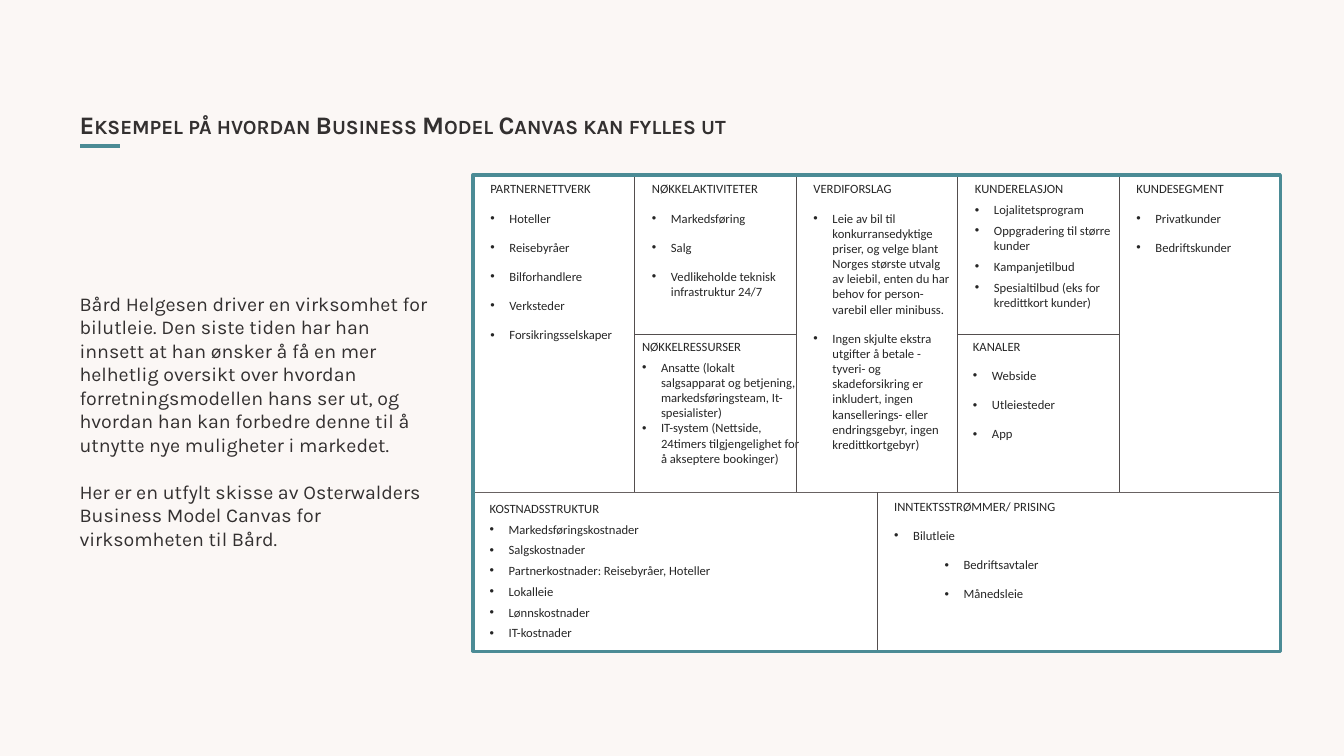
from lxml import etree
from pptx import Presentation
from pptx import util as u
from pptx.dml.color import RGBColor
from pptx.enum import shapes, text
from pptx.oxml import ns

HUES = {"back": "FBF7F5", "white": "FFFFFF", "teal": "4B8B95", "grid": "534E4E",
        "mid": "686262", "ink": "262626", "dark": "333030"}
LEFT, TOP, COL, ROW = 11.92, 4.41, 4.07, 4


def rule(x1, y1, x2, y2, tone, width):
    """Draw a straight line, in cm, without a shadow."""
    line = slide.shapes.add_connector(shapes.MSO_CONNECTOR.STRAIGHT,
                                      u.Cm(x1), u.Cm(y1), u.Cm(x2), u.Cm(y2))
    line.line.color.rgb = RGBColor.from_string(HUES[tone])
    line.line.width = u.Pt(width)
    etree.SubElement(line._element.spPr, ns.qn("a:effectLst"))
    return line


def block(x, y, width, height, fill=True, tone=None, weight=0):
    """Add a rectangle, in cm, white or hollow, with a border if a tone is given."""
    rect = slide.shapes.add_shape(shapes.MSO_SHAPE.RECTANGLE, u.Cm(x), u.Cm(y),
                                  u.Cm(width), u.Cm(height))
    rect.shadow.inherit = False
    if fill:
        rect.fill.solid()
        rect.fill.fore_color.rgb = RGBColor.from_string(HUES["white"])
    else:
        rect.fill.background()
    if tone:
        rect.line.color.rgb = RGBColor.from_string(HUES[tone])
        rect.line.width = u.Pt(weight)
    else:
        rect.line.fill.background()
    return rect


deck = Presentation()
deck.slide_width, deck.slide_height = u.Cm(33.87), u.Cm(19.05)
slide = deck.slides.add_slide(deck.slide_layouts[1])
slide.background.fill.solid()
slide.background.fill.fore_color.rgb = RGBColor.from_string(HUES["back"])

# Title and story
title, body = slide.placeholders
story = [
    "Bård Helgesen driver en virksomhet for bilutleie. Den siste tiden har han innsett "
    "at han ønsker å få en mer helhetlig oversikt over hvordan forretningsmodellen hans "
    "ser ut, og hvordan han kan forbedre denne til å utnytte nye muligheter i markedet.",
    "Her er en utfylt skisse av Osterwalders Business Model Canvas for virksomheten til Bård.",
]
heads = [
    (title, 2.63, 32.11, 1.02, 18, ["Eksempel på hvordan Business Model Canvas kan fylles ut"]),
    (body, 7.22, 9.55, 6.25, 14, story),
]
for holder, top, width, height, size, paras in heads:
    holder.left, holder.top = u.Cm(1.75), u.Cm(top)
    holder.width, holder.height = u.Cm(width), u.Cm(height)
    frame = holder.text_frame
    frame.auto_size = text.MSO_AUTO_SIZE.SHAPE_TO_FIT_TEXT
    frame.vertical_anchor = text.MSO_ANCHOR.TOP
    for n, words in enumerate(paras):
        para = frame.paragraphs[0] if n == 0 else frame.add_paragraph()
        para.alignment = text.PP_ALIGN.LEFT
        para.space_before = u.Pt(16.8 if n else 0)
        props = para._p.get_or_add_pPr()
        props.set("marL", "0")
        props.set("indent", "0")
        etree.SubElement(props, ns.qn("a:buNone"))
        run = para.add_run()
        run.text = words
        run.font.name, run.font.size = "Karla", u.Pt(size)
        run.font.color.rgb = RGBColor.from_string(HUES["dark"])
        if holder is title:
            run.font.bold = True
            run._r.get_or_add_rPr().set("cap", "small")
rule(2.02, 3.67, 3.02, 3.67, "teal", 3)

# White canvas
canvas = block(LEFT, TOP, 5 * COL, 3 * ROW, tone="grid", weight=0.5)

# Column, row, inset x and y, width, height, space before and after, heading, items, subitems
parts = [
    (0, 0, 0.41, 0.03, 3.53, 4.34, 6, 4, "PARTNERNETTVERK",
     ["Hoteller", "Reisebyråer", "Bilforhandlere", "Verksteder", "Forsikringsselskaper"], []),
    (1, 0, 0.41, 0.03, 3.99, 3.25, 6, 4, "NØKKELAKTIVITETER",
     ["Markedsføring", "Salg", "Vedlikeholde teknisk infrastruktur 24/7"], []),
    (2, 0, 0.41, 0.03, 3.58, 7.11, 6, 4, "VERDIFORSLAG",
     ["Leie av bil til konkurransedyktige priser, og velge blant Norges største utvalg av "
      "leiebil, enten du har behov for person- varebil eller minibuss.",
      "Ingen skjulte ekstra utgifter å betale - tyveri- og skadeforsikring er inkludert, "
      "ingen kansellerings- eller endringsgebyr, ingen kredittkortgebyr)"], []),
    (3, 0, 0.41, 0.03, 3.56, 3.53, 0, 4, "KUNDERELASJON",
     ["Lojalitetsprogram", "Oppgradering til større kunder", "Kampanjetilbud",
      "Spesialtilbud (eks for kredittkort kunder)"], []),
    (4, 0, 0.41, 0.03, 3.56, 2.13, 6, 4, "KUNDESEGMENT",
     ["Privatkunder", "Bedriftskunder"], []),
    (1, 1, 0.16, 0, 4.05, 3.86, 0, 0, "NØKKELRESSURSER",
     ["Ansatte (lokalt salgsapparat og betjening, markedsføringsteam, It-spesialister)",
      "IT-system (Nettside, 24timers tilgjengelighet for å akseptere bookinger)"], []),
    (3, 1, 0.36, 0, 3.56, 2.87, 6, 4, "KANALER", ["Webside", "Utleiesteder", "App"], []),
    (0, 2, 0.39, 0.08, 9.8, 3.81, 0, 4, "KOSTNADSSTRUKTUR",
     ["Markedsføringskostnader", "Salgskostnader", "Partnerkostnader: Reisebyråer, Hoteller",
      "Lokalleie", "Lønnskostnader", "IT-kostnader"], []),
    (2.5, 2, 0.41, 0.03, 7.42, 2.87, 6, 4, "INNTEKTSSTRØMMER/ PRISING",
     ["Bilutleie"], ["Bedriftsavtaler", "Månedsleie"]),
]
for col, row, dx, dy, width, height, before, after, head, items, subs in parts:
    box = block(LEFT + col * COL + dx, TOP + row * ROW + dy, width, height)
    frame = box.text_frame
    frame.word_wrap = True
    frame.auto_size = text.MSO_AUTO_SIZE.SHAPE_TO_FIT_TEXT
    frame.vertical_anchor = text.MSO_ANCHOR.TOP
    frame.margin_left = frame.margin_right = u.Cm(0.03)
    frame.margin_top = frame.margin_bottom = u.Cm(0.13)
    for n, words in enumerate([head] + items + subs):
        para = frame.paragraphs[0] if n == 0 else frame.add_paragraph()
        para.alignment = text.PP_ALIGN.LEFT
        para.space_before = u.Pt(before if n else 0)
        para.space_after = u.Pt(after if n else 4)
        if n:
            para.level = 1 if n > len(items) else 0
            props = para._p.get_or_add_pPr()
            props.set("marL", str(u.Cm(0.48 + 1.27 * para.level)))
            props.set("indent", str(u.Cm(-0.48)))
            etree.SubElement(props, ns.qn("a:buFont")).set("typeface", "Arial")
            etree.SubElement(props, ns.qn("a:buChar")).set("char", "•")
        run = para.add_run()
        run.text = words
        run.font.name, run.font.size = "Calibri", u.Pt(9)
        run.font.color.rgb = RGBColor.from_string(HUES["ink"])

# Grid lines, in columns and rows
grid = [(n, 0, n, 2) for n in range(1, 5)]
grid += [(1, 1, 2, 1), (3, 1, 4, 1), (0, 2, 5, 2), (2.5, 2, 2.5, 3)]
for x1, y1, x2, y2 in grid:
    line = rule(LEFT + x1 * COL, TOP + y1 * ROW, LEFT + x2 * COL, TOP + y2 * ROW,
                "mid" if x2 == 5 else "grid", 0.05)
    if y2 == 3:
        line.end_connect(canvas, 2)

# Teal border over the cells
block(LEFT, TOP, 5 * COL, 3 * ROW, fill=False, tone="teal", weight=2.25)

deck.save("out.pptx")
